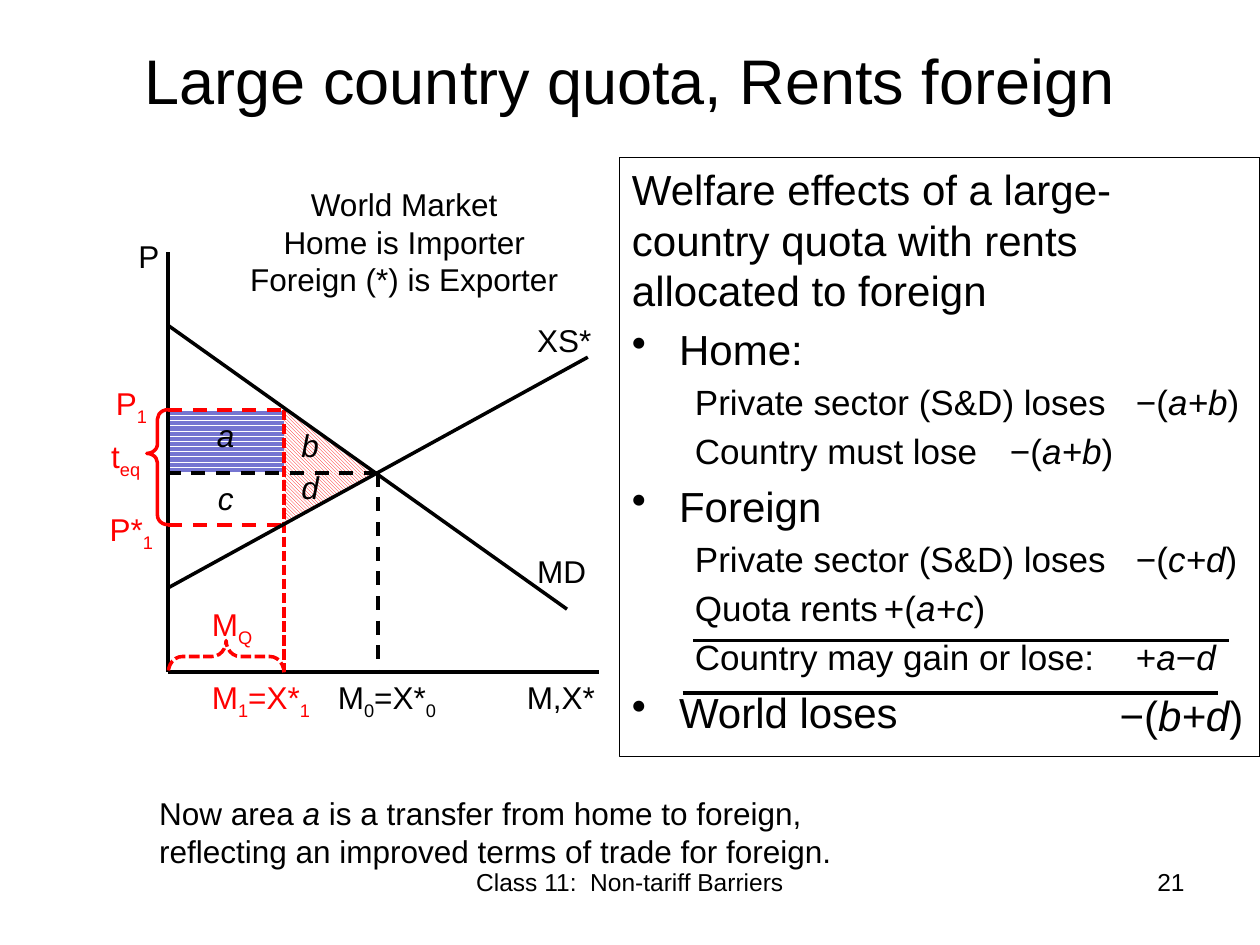
from pptx import Presentation
from pptx.dml.color import RGBColor
from pptx.enum.dml import MSO_LINE, MSO_PATTERN
from pptx.enum.shapes import MSO_CONNECTOR, MSO_SHAPE
from pptx.enum.text import MSO_ANCHOR, PP_ALIGN
from pptx.oxml.ns import qn
from pptx.util import Cm, Pt
from lxml.etree import SubElement

COLORS = {"ink": "000000", "quota": "FF0000", "rent": "7575D1", "paper": "FFFFFF"}
ORIGIN_X, QUOTA_X, FREE_X = 3.39, 5.72, 7.62
QUOTA_Y, FREE_Y, EXPORT_Y, AXIS_Y = 8.26, 9.53, 10.58, 13.55
LABEL_W, AREA_W, QUANTITY_W, PRICE_W = 1.91, 1.06, 2.75, 1.48
LABEL_H = 1.02
VALUE_TAB = 9.96

WELFARE = [
    ("intro", "Welfare effects of a large-country quota with rents allocated to foreign"),
    ("party", "Home:"),
    ("effect", "Private sector (S&D) loses\t−(|a+b|)"),
    ("effect", "Country must lose\t−(|a+b|)"),
    ("party", "Foreign"),
    ("effect", "Private sector (S&D) loses\t−(|c+d|)"),
    ("effect", "Quota rents\t+(|a+c|)"),
    ("effect", "Country may gain or lose:\t+|a|−|d"),
    ("party", "World loses"),
]


def rgb(color):
    """Return the named colour."""
    return RGBColor.from_string(COLORS[color])


def write(paragraph, text, size=18, color="ink", align=PP_ALIGN.LEFT, subscript=False):
    """Fill a paragraph; every second part between bars is italic or subscript."""
    paragraph.alignment = align
    paragraph.font.name = "Arial"
    paragraph.font.size = Pt(size)
    paragraph.font.color.rgb = rgb(color)
    for index, part in enumerate(text.split("|")):
        if not part:
            continue
        run = paragraph.add_run()
        run.text = part
        if index % 2 and subscript:
            run._r.get_or_add_rPr().set("baseline", "-25000")
        elif index % 2:
            run.font.italic = True


def add_text(slide, left, top, width, height, *lines, **style):
    """Add a wrapping text box with one paragraph per line."""
    box = slide.shapes.add_textbox(Cm(left), Cm(top), Cm(width), Cm(height))
    frame = box.text_frame
    frame.word_wrap = True
    for index, line in enumerate(lines):
        paragraph = frame.add_paragraph() if index else frame.paragraphs[0]
        write(paragraph, line, **style)
    return box


def add_line(slide, start, end, color="ink", dash=None):
    """Draw a straight line between two points."""
    line = slide.shapes.add_connector(
        MSO_CONNECTOR.STRAIGHT, *(Cm(value) for value in start + end))
    line.line.color.rgb = rgb(color)
    line.line.width = Pt(2)
    if dash:
        line.line.dash_style = dash
    SubElement(line._element.spPr, qn("a:effectLst"))


def add_outline(slide, kind, left, top, width, height, flip=False):
    """Add a preset shape without shadow, optionally flipped vertically."""
    shape = slide.shapes.add_shape(kind, Cm(left), Cm(top), Cm(width), Cm(height))
    shape.shadow.inherit = False
    if flip:
        shape._element.spPr.get_or_add_xfrm().set("flipV", "1")
    return shape


def add_area(slide, kind, left, top, right, bottom, pattern, color, flip=False):
    """Add a hatched welfare area between two corners."""
    area = add_outline(slide, kind, left, top, right - left, bottom - top, flip)
    area.fill.patterned()
    area.fill.pattern = pattern
    area.fill.fore_color.rgb = rgb(color)
    area.fill.back_color.rgb = rgb("paper")
    area.line.fill.background()


def add_brace(slide, left, top, width, height, tip, rotation=0, dash=None):
    """Add a red brace marking a distance on an axis."""
    brace = add_outline(slide, MSO_SHAPE.LEFT_BRACE, left, top, width, height, True)
    brace.adjustments[0] = 0.44
    brace.adjustments[1] = tip
    brace.rotation = rotation
    brace.fill.background()
    brace.line.color.rgb = rgb("quota")
    brace.line.width = Pt(2)
    if dash:
        brace.line.dash_style = dash


def add_welfare(slide):
    """Add the framed list of welfare effects with its sum lines."""
    panel = add_text(slide, 12.49, 3.18, 12.91, 12.07)
    panel.line.color.rgb = rgb("ink")
    panel.line.width = Pt(0.75)
    frame = panel.text_frame
    for index, (level, text) in enumerate(WELFARE):
        paragraph = frame.add_paragraph() if index else frame.paragraphs[0]
        properties = paragraph._p.get_or_add_pPr()
        size = 24
        if level == "party":
            properties.set("marL", str(Cm(0.95)))
            properties.set("indent", str(Cm(-0.95)))
            SubElement(properties, qn("a:buChar"), char="•")
        elif level == "effect":
            size = 20
            properties.set("marL", "0")
            properties.set("indent", str(Cm(1.27)))
            SubElement(properties, qn("a:buNone"))
            tabs = SubElement(properties, qn("a:tabLst"))
            SubElement(tabs, qn("a:tab"), pos=str(Cm(VALUE_TAB)), algn="l")
        paragraph.space_before = Pt(size * 0.2)
        write(paragraph, text, size)
    add_text(slide, 22.32, 13.78, 3.08, 1.27, "−(|b+d|)", size=24)
    for left, y in ((13.97, 12.91), (13.76, 13.97)):
        add_line(slide, (left, y), (left + 10.8, y))


def add_market(slide):
    """Draw the world market diagram."""
    add_area(slide, MSO_SHAPE.RECTANGLE, ORIGIN_X, QUOTA_Y, QUOTA_X, FREE_Y,
             MSO_PATTERN.DARK_HORIZONTAL, "rent")
    for top, bottom, flip in ((FREE_Y, EXPORT_Y, True), (QUOTA_Y, FREE_Y, False)):
        add_area(slide, MSO_SHAPE.RIGHT_TRIANGLE, QUOTA_X, top, FREE_X, bottom,
                 MSO_PATTERN.DARK_DOWNWARD_DIAGONAL, "quota", flip)

    origin = (ORIGIN_X, AXIS_Y)
    add_line(slide, origin, (12.07, AXIS_Y))
    add_line(slide, origin, (ORIGIN_X, 5.08))
    add_line(slide, (FREE_X, FREE_Y), (FREE_X, AXIS_Y), dash=MSO_LINE.DASH)
    add_line(slide, (QUOTA_X, QUOTA_Y), (QUOTA_X, AXIS_Y), "quota", MSO_LINE.SQUARE_DOT)
    for price in (EXPORT_Y, QUOTA_Y):
        add_line(slide, (ORIGIN_X, price), (QUOTA_X, price), "quota", MSO_LINE.DASH)
    add_brace(slide, 2.96, QUOTA_Y, 0.43, EXPORT_Y - QUOTA_Y, 0.62)
    add_line(slide, (ORIGIN_X, 11.85), (11.85, 7.2))
    add_line(slide, (11.43, 12.28), (ORIGIN_X, 6.56))
    add_line(slide, (FREE_X, FREE_Y), (ORIGIN_X, FREE_Y), dash=MSO_LINE.DASH)
    add_brace(slide, 4.24, 12.07, 0.64, QUOTA_X - ORIGIN_X, 0.5, 90, MSO_LINE.SQUARE_DOT)


def add_market_labels(slide):
    """Label the axes, curves, areas, prices and quantities."""
    add_text(slide, 4.02, 3.6, 8.26, 2.57, "World Market", "Home is Importer",
             "Foreign (*) is Exporter", align=PP_ALIGN.CENTER)
    for label, left, top in (("P", 2.54, 4.66), ("MD", 10.58, 11.01),
                             ("XS*", 10.58, 6.35), ("M,X*", 10.37, AXIS_Y)):
        add_text(slide, left, top, LABEL_W, LABEL_H, label)
    for area, left, top in (("|a", 4.02, QUOTA_Y), ("|b", QUOTA_X, 8.47),
                            ("|c", 4.02, FREE_Y), ("|d", QUOTA_X, 9.31)):
        add_text(slide, left, top, AREA_W, LABEL_H, area, align=PP_ALIGN.CENTER)
    for price, left, top, width in (("P|1", 1.91, 7.62, PRICE_W),
                                    ("P*|1", 1.91, 10.16, PRICE_W),
                                    ("t|eq", 1.69, 8.68, 1.69)):
        add_text(slide, left, top, width, LABEL_H, price, color="quota",
                 align=PP_ALIGN.CENTER, subscript=True)
    for quantity, left, top, color in (("M|0|=X*|0", 6.56, AXIS_Y, "ink"),
                                       ("M|1|=X*|1", 4.02, AXIS_Y, "quota"),
                                       ("M|Q", 4.02, 12.07, "quota")):
        add_text(slide, left, top, QUANTITY_W, LABEL_H, quantity, color=color,
                 subscript=True)


def main():
    """Build the slide and save it."""
    deck = Presentation()
    deck.slide_width, deck.slide_height = Cm(25.4), Cm(19.05)
    slide = deck.slides.add_slide(deck.slide_layouts[6])
    title = add_text(slide, 1.27, 0, 22.86, 3.18, "Large country quota, Rents foreign",
                     size=36, align=PP_ALIGN.CENTER)
    title.text_frame.vertical_anchor = MSO_ANCHOR.MIDDLE
    add_market(slide)
    add_market_labels(slide)
    add_welfare(slide)
    add_text(slide, 2.96, 15.88, 15.45, 1.8,
             "Now area |a| is a transfer from home to foreign, "
             "reflecting an improved terms of trade for foreign.")
    add_text(slide, 8.68, 17.36, 8.04, 1.32, "Class 11:  Non-tariff Barriers",
             size=14, align=PP_ALIGN.CENTER)
    add_text(slide, 18.2, 17.36, 5.93, 1.32, "21", size=14, align=PP_ALIGN.RIGHT)
    deck.save("out.pptx")


if __name__ == "__main__":
    main()
